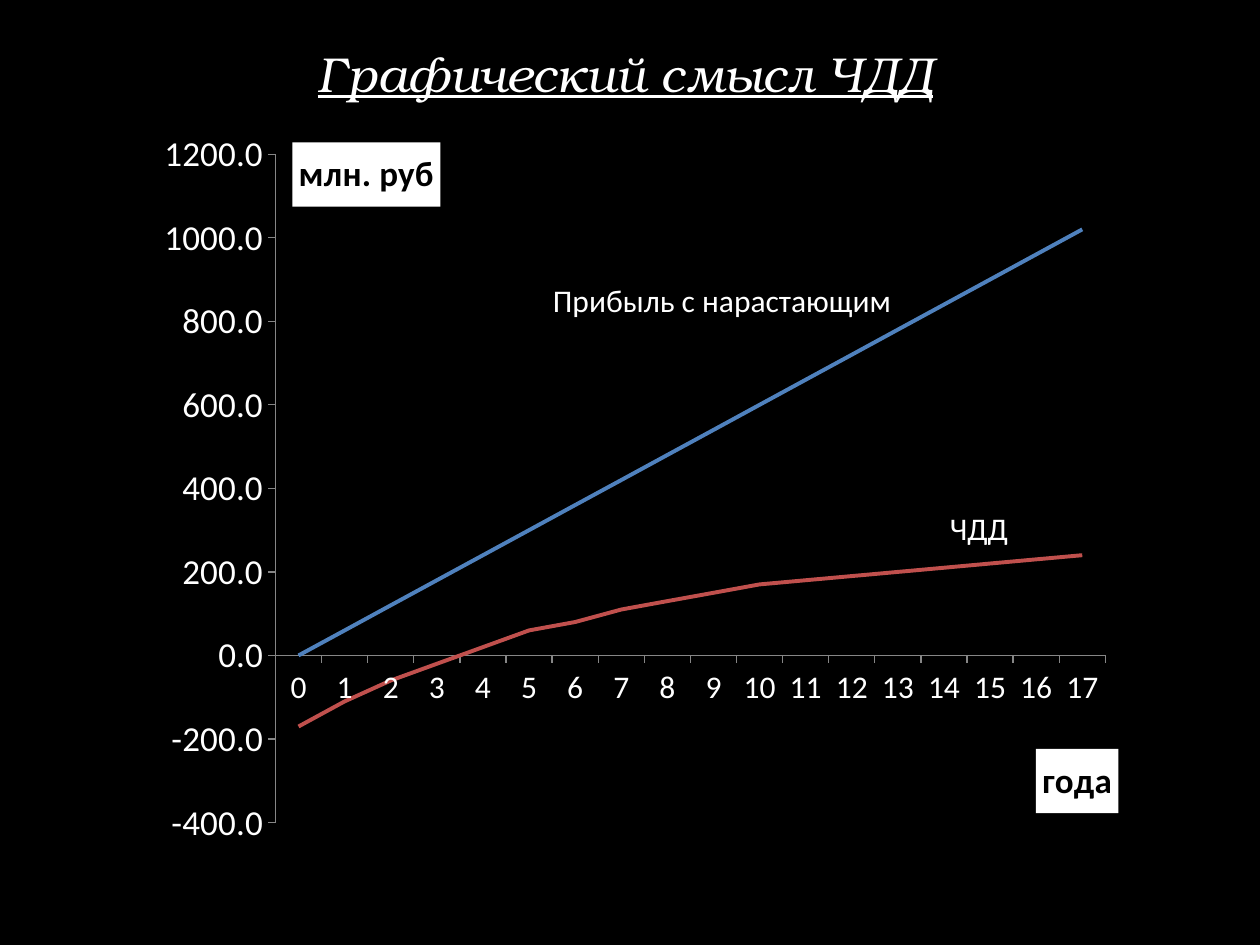
from lxml import etree
from pptx import Presentation
from pptx.chart import data as cd
from pptx.dml.color import RGBColor
from pptx.enum import chart as ch, text as tx
from pptx.oxml import ns
from pptx.util import Pt

HEX = {"back": "000000", "text": "FFFFFF", "axis": "868686",
       "gain": "4F81BD", "npv": "C0504D"}
FONT = "Calibri"
HEAD = "Графический смысл ЧДД"
LINES = [
    ("Series 1", "gain", [60 * n for n in range(18)]),
    ("Series 2", "npv", [-170, -110, -60, -20, 20, 60, 80, 110, 130, 150,
                         170, 180, 190, 200, 210, 220, 230, 240]),
]
NOTES = [  # text, left, top, width, height
    ("Прибыль с нарастающим", 308.9, 157, 210.2, 28.8),
    ("ЧДД", 535.7, 287.3, 48.2, 28.8),
]
PLOT = {"layoutTarget": "inner", "xMode": "edge", "yMode": "edge",
        "x": 0.133, "y": 0.051, "w": 0.837, "h": 0.887}


def rgb(key):
    return RGBColor.from_string(HEX[key])


def style(font, size, key="text", name=FONT):
    font.size, font.name = Pt(size), name
    font.color.rgb = rgb(key)


def place(node, spots, at):
    """Give a chart part a manual layout; at is its index among the children."""
    lay = node.find(ns.qn("c:layout"))
    if lay is None:
        lay = etree.Element(ns.qn("c:layout"))
        node.insert(at, lay)
    man = etree.SubElement(lay, ns.qn("c:manualLayout"))
    for tag, val in spots.items():
        etree.SubElement(man, ns.qn("c:" + tag)).set("val", str(val))


def dress(axis, label, size, x, y):
    axis.has_major_gridlines = False
    axis.major_tick_mark = ch.XL_TICK_MARK.OUTSIDE
    axis.minor_tick_mark = ch.XL_TICK_MARK.NONE
    axis.format.line.color.rgb = rgb("axis")
    axis.format.line.width = Pt(0.75)
    style(axis.tick_labels.font, size)
    title = axis.axis_title
    frame = title.text_frame
    run = frame.paragraphs[0].add_run()
    run.text = label
    run.font.bold = True
    style(run.font, 20, "back")
    frame._txBody.bodyPr.set("rot", "0")
    frame._txBody.bodyPr.set("vert", "horz")
    title.format.fill.solid()
    title.format.fill.fore_color.rgb = rgb("text")
    place(title._element, {"xMode": "edge", "yMode": "edge", "x": x, "y": y}, 1)


def draw(slide):
    data = cd.CategoryChartData(number_format="0.0")
    data.categories = [str(n) for n in range(18)]
    for name, _, vals in LINES:
        data.add_series(name, vals)
    chart = slide.shapes.add_chart(
        ch.XL_CHART_TYPE.LINE, Pt(82.1), Pt(66.2), Pt(566.6), Pt(430.6), data).chart
    chart.has_legend = chart.has_title = False
    style(chart.font, 10)
    chart.plots[0].vary_by_categories = False
    for line, (_, key, _) in zip(chart.plots[0].series, LINES):
        line.smooth = False
        line.marker.style = ch.XL_MARKER_STYLE.NONE
        line.format.line.color.rgb = rgb(key)
        line.format.line.width = Pt(2.25)
    dress(chart.category_axis, "года", 18, 0.9, 0.84)
    axis = chart.value_axis
    dress(axis, "млн. руб", 20, 0.15, 0.035)
    axis.minimum_scale, axis.maximum_scale, axis.major_unit = -400, 1200, 200
    axis.tick_labels.number_format = "0.0"
    axis.tick_labels.number_format_is_linked = False
    place(chart._chartSpace.find(".//" + ns.qn("c:plotArea")), PLOT, 0)


def main():
    deck = Presentation()
    deck.slide_width, deck.slide_height = Pt(720), Pt(540)
    slide = deck.slides.add_slide(deck.slide_layouts[5])
    slide.background.fill.solid()
    slide.background.fill.fore_color.rgb = rgb("back")

    head = slide.shapes.title
    head.left, head.top, head.width, head.height = map(Pt, (20.2, 20.9, 674.6, 41))
    para = head.text_frame.paragraphs[0]
    para.alignment = tx.PP_ALIGN.CENTER
    run = para.add_run()
    run.text = HEAD
    run.font.italic = run.font.underline = True
    style(run.font, 28, name="TeX Gyre Bonum")

    draw(slide)
    for words, *box in NOTES:
        frame = slide.shapes.add_textbox(*map(Pt, box)).text_frame
        frame.word_wrap = False
        frame.auto_size = tx.MSO_AUTO_SIZE.SHAPE_TO_FIT_TEXT
        run = frame.paragraphs[0].add_run()
        run.text = words
        style(run.font, 18)
    deck.save("out.pptx")


if __name__ == "__main__":
    main()
